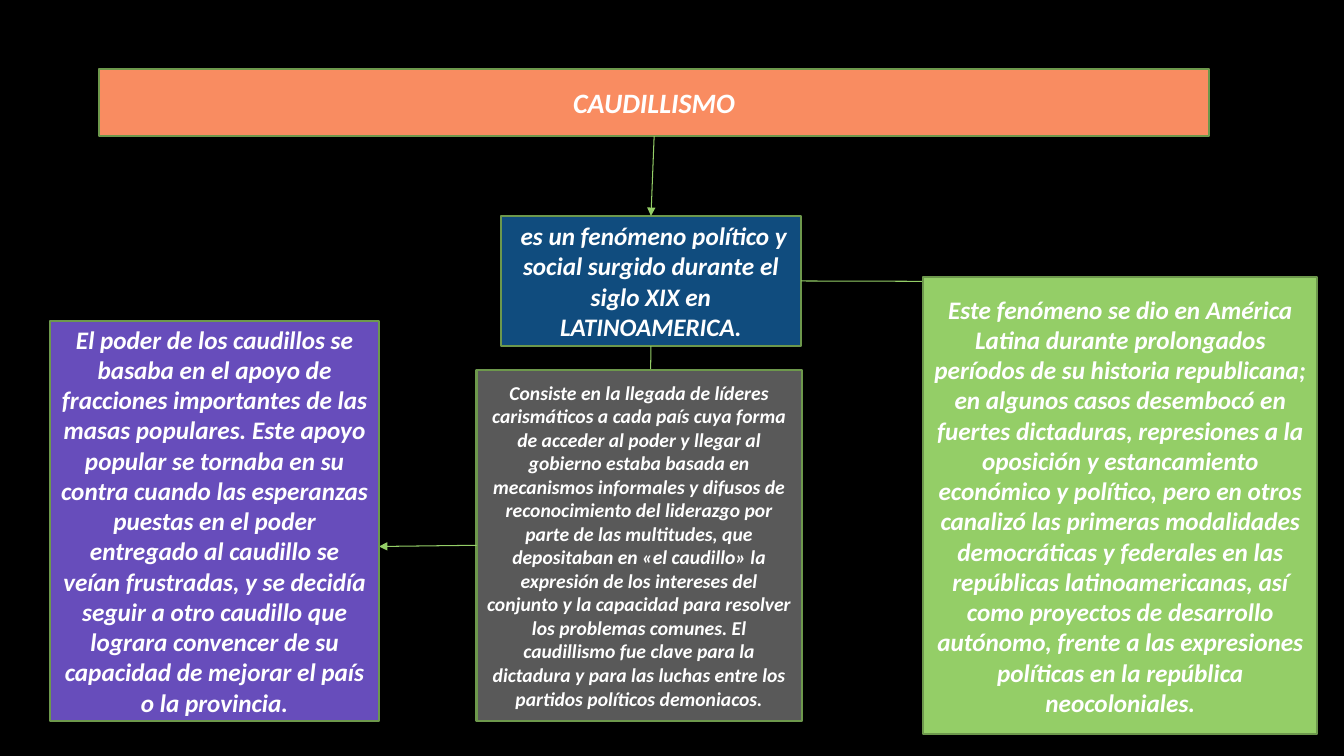
from lxml.etree import SubElement
from pptx import Presentation
from pptx.dml.color import RGBColor
from pptx.enum.shapes import MSO_CONNECTOR, MSO_SHAPE
from pptx.enum.text import MSO_ANCHOR, PP_ALIGN
from pptx.oxml.ns import qn
from pptx.util import Cm, Pt


def color(value):
    return RGBColor.from_string(value)


def apply_format(target, values):
    for name, value in values.items():
        setattr(target, name, value)


class ConceptMap:
    """Draws the boxes and arrows of a concept map on one slide."""

    border = "6D984C"
    arrow_color = "94CE67"
    text_color = "FFFFFF"
    frame_format = {"word_wrap": True, "vertical_anchor": MSO_ANCHOR.MIDDLE}
    emphasis = {"bold": True, "italic": True}

    def __init__(self, presentation, background):
        self.slide = presentation.slides.add_slide(presentation.slide_layouts[6])
        fill = self.slide.background.fill
        fill.solid()
        fill.fore_color.rgb = color(background)

    def box(self, left, top, width, height, fill, text, size=18, lead=""):
        shape = self.slide.shapes.add_shape(
            MSO_SHAPE.RECTANGLE, Cm(left), Cm(top), Cm(width), Cm(height))
        shape.shadow.inherit = False
        shape.fill.solid()
        shape.fill.fore_color.rgb = color(fill)
        shape.line.color.rgb = color(self.border)
        shape.line.width = Pt(1.5)
        apply_format(shape.text_frame, self.frame_format)
        paragraph = shape.text_frame.paragraphs[0]
        paragraph.alignment = PP_ALIGN.CENTER
        for words, style in ((lead, {}), (text, self.emphasis)):
            if words:
                run = paragraph.add_run()
                run.text = words
                apply_format(run.font, {"name": "Calibri", "size": Pt(size), **style})
                run.font.color.rgb = color(self.text_color)
        return shape

    def arrow(self, source, side, end=(0, 0), target=None, target_side=0):
        connector = self.slide.shapes.add_connector(
            MSO_CONNECTOR.STRAIGHT, 0, 0, Cm(end[0]), Cm(end[1]))
        connector.begin_connect(source, side)
        if target is not None:
            connector.end_connect(target, target_side)
        connector.line.color.rgb = color(self.arrow_color)
        connector.line.width = Pt(0.75)
        line = connector.line._get_or_add_ln()
        SubElement(line, qn("a:tailEnd"), type="triangle")
        SubElement(connector._element.spPr, qn("a:effectLst"))


def main():
    presentation = Presentation()
    apply_format(presentation, {"slide_width": Cm(33.87), "slide_height": Cm(19.05)})
    concept_map = ConceptMap(presentation, "000000")

    title = concept_map.box(2.49, 1.73, 27.99, 1.7, "F98C61", "CAUDILLISMO", 20)
    definition = concept_map.box(
        12.62, 5.44, 7.57, 3.28, "104C7E",
        "es un fenómeno político y social surgido durante el siglo "
        "XIX en LATINOAMERICA.", lead=" ")
    concept_map.arrow(title, 2, target=definition)

    concept_map.arrow(definition, 2, (16.38, 10.44))
    leadership = concept_map.box(
        12.01, 9.32, 8.2, 8.84, "595959",
        "Consiste en la llegada de líderes carismáticos a cada país cuya forma de "
        "acceder al poder y llegar al gobierno estaba basada en mecanismos "
        "informales y difusos de reconocimiento del liderazgo por parte de las "
        "multitudes, que depositaban en «el caudillo» la expresión de los "
        "intereses del conjunto y la capacidad para resolver los problemas "
        "comunes. El caudillismo fue clave para la dictadura y para las luchas "
        "entre los partidos políticos demoniacos.", 14)

    concept_map.arrow(definition, 3, (23.6, 7.09))
    concept_map.box(
        23.27, 6.99, 9.93, 11.51, "94CE67",
        "Este fenómeno se dio en América Latina durante prolongados períodos de "
        "su historia republicana; en algunos casos desembocó en fuertes "
        "dictaduras, represiones a la oposición y estancamiento económico "
        "y político, pero en otros canalizó las primeras "
        "modalidades democráticas y federales en las repúblicas "
        "latinoamericanas, así como proyectos de desarrollo autónomo, frente a "
        "las expresiones políticas en la república neocoloniales.")

    concept_map.arrow(leadership, 1, (9.55, 13.77))
    concept_map.box(
        1.27, 8.08, 8.28, 10.08, "674DBB",
        "El poder de los caudillos se basaba en el apoyo de fracciones "
        "importantes de las masas populares. Este apoyo popular se tornaba en su "
        "contra cuando las esperanzas puestas en el poder entregado al caudillo "
        "se veían frustradas, y se decidía seguir a otro caudillo que lograra "
        "convencer de su capacidad de mejorar el país o la provincia.")

    presentation.save("out.pptx")


if __name__ == "__main__":
    main()
